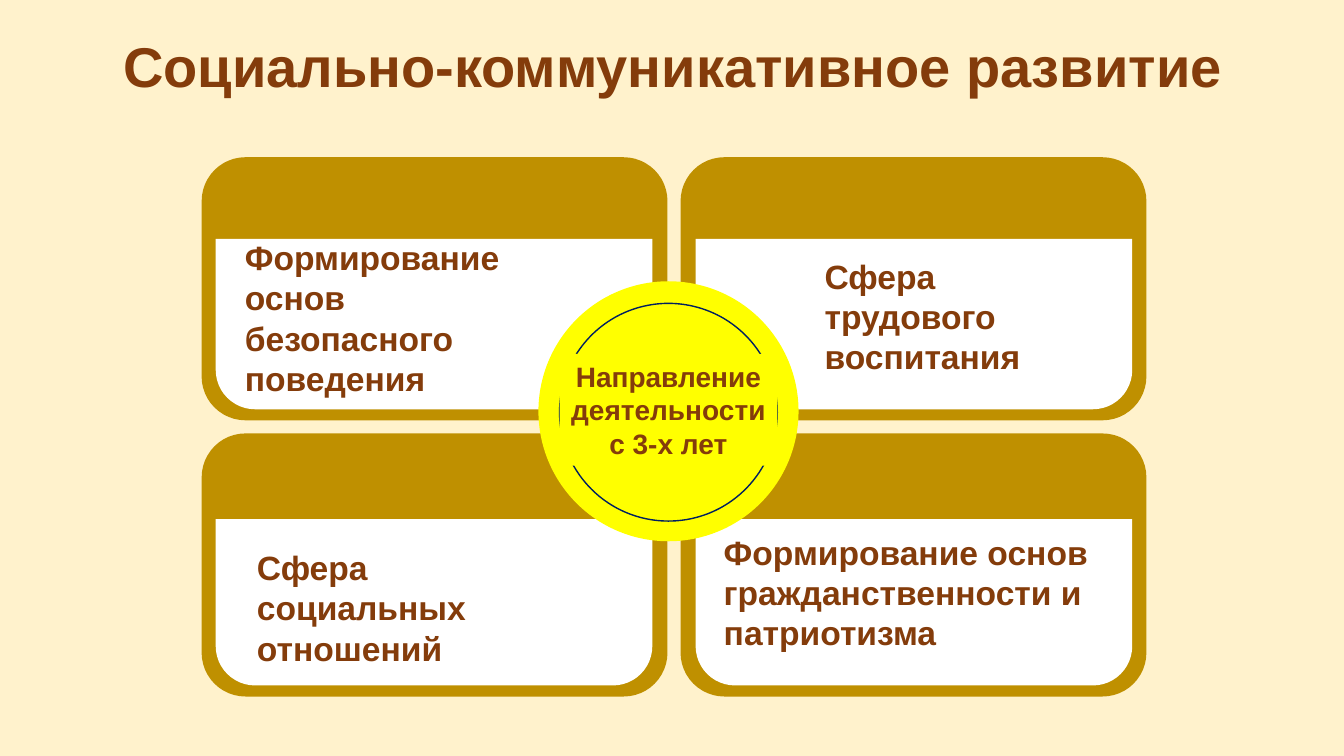
from dataclasses import dataclass

from pptx import Presentation
from pptx.dml.color import RGBColor
from pptx.enum.shapes import MSO_SHAPE
from pptx.enum.text import MSO_ANCHOR, MSO_AUTO_SIZE, PP_ALIGN
from pptx.util import Inches, Pt

ROUNDED = MSO_SHAPE.ROUNDED_RECTANGLE
ROUNDED_BOTTOM = MSO_SHAPE.ROUND_2_SAME_RECTANGLE
OVAL = MSO_SHAPE.OVAL
RECTANGLE = MSO_SHAPE.RECTANGLE
MIDDLE = MSO_ANCHOR.MIDDLE
NO_FIT = MSO_AUTO_SIZE.NONE
LEFT, CENTER = PP_ALIGN.LEFT, PP_ALIGN.CENTER


@dataclass(frozen=True)
class Theme:
    font: str = "Arial"
    background: str = "FFF2CC"
    text: str = "843C0B"
    card: str = "BF9000"
    panel: str = "FFFFFF"
    hub: str = "FFFF00"
    ring: str = "002060"
    title_size: int = 40
    card_size: int = 24
    hub_size: int = 20


class Page:
    def __init__(self, deck, theme):
        self.theme = theme
        self.slide = deck.slides.add_slide(deck.slide_layouts[5])
        fill = self.slide.background.fill
        fill.solid()
        fill.fore_color.rgb = RGBColor.from_string(theme.background)

    def set_text(self, box, text, size, align):
        frame = box.text_frame
        frame.word_wrap = True
        frame.auto_size = NO_FIT
        frame.vertical_anchor = MIDDLE
        para = frame.paragraphs[0]
        para.text = text
        para.alignment = align
        para.font.name = self.theme.font
        para.font.size = Pt(size)
        para.font.bold = True
        para.font.color.rgb = RGBColor.from_string(self.theme.text)
        return para

    def title(self, text, left, top, width, height):
        box = self.slide.shapes.title
        box.left, box.top = Inches(left), Inches(top)
        box.width, box.height = Inches(width), Inches(height)
        para = self.set_text(box, text, self.theme.title_size, CENTER)
        para.line_spacing = 0.9

    def shape(self, kind, left, top, width, height, color, line=None, group=None):
        parent = group or self.slide
        box = parent.shapes.add_shape(
            kind, Inches(left), Inches(top), Inches(width), Inches(height))
        box.shadow.inherit = False
        box.fill.solid()
        box.fill.fore_color.rgb = RGBColor.from_string(color)
        if line:
            box.line.color.rgb = RGBColor.from_string(line)
            box.line.width = Pt(1)
        else:
            box.line.fill.background()
        return box

    def panel(self, left, top, width, height, radius):
        box = self.shape(ROUNDED_BOTTOM, left, top, width, height, self.theme.panel)
        box.adjustments[0] = 0
        box.adjustments[1] = radius / height

    def label(self, text, left, top, width, height):
        box = self.slide.shapes.add_textbox(
            Inches(left), Inches(top), Inches(width), Inches(height))
        self.set_text(box, text, self.theme.card_size, LEFT)

    def hub(self, text):
        theme = self.theme
        group = self.slide.shapes.add_group_shape()
        self.shape(OVAL, 5.34, 2.79, 2.58, 2.58, theme.hub, group=group)
        self.shape(OVAL, 5.55, 3.01, 2.16, 2.16, theme.hub, theme.ring, group)
        self.shape(OVAL, 5.6, 3.08, 2.06, 1.81, theme.hub, group=group)
        band = self.shape(RECTANGLE, 5.55, 3.51, 2.16, 1.11, theme.hub, group=group)
        self.set_text(band, text, theme.hub_size, CENTER)


def main():
    deck = Presentation()
    deck.slide_width, deck.slide_height = Inches(13.33), Inches(7.5)
    page = Page(deck, Theme())
    page.title("Социально-коммуникативное развитие", 0.67, 0.3, 12, 0.78)

    card_width, card_height = 4.62, 2.61
    panel_width, panel_radius = 4.33, 0.39
    columns = ((2, 2.14), (6.75, 6.9))
    rows = ((1.56, 2.37, 1.69), (4.3, 5.15, 1.65))
    labels = (
        ("Формирование основ безопасного поведения", 2.33, 2.29, 3.31, 1.72),
        ("Сфера трудового воспитания", 8.08, 2.48, 2.91, 1.31),
        ("Сфера социальных отношений", 2.45, 5.37, 3.02, 1.31),
        ("Формирование основ гражданственности и патриотизма", 7.08, 5.22, 4.03, 1.31),
    )

    for card_top, panel_top, panel_height in rows:
        for card_left, panel_left in columns:
            page.shape(ROUNDED, card_left, card_top, card_width, card_height, page.theme.card)
            page.panel(panel_left, panel_top, panel_width, panel_height, panel_radius)
    for label in labels:
        page.label(*label)
    page.hub("Направление деятельности с 3-х лет")

    deck.save("out.pptx")


if __name__ == "__main__":
    main()
